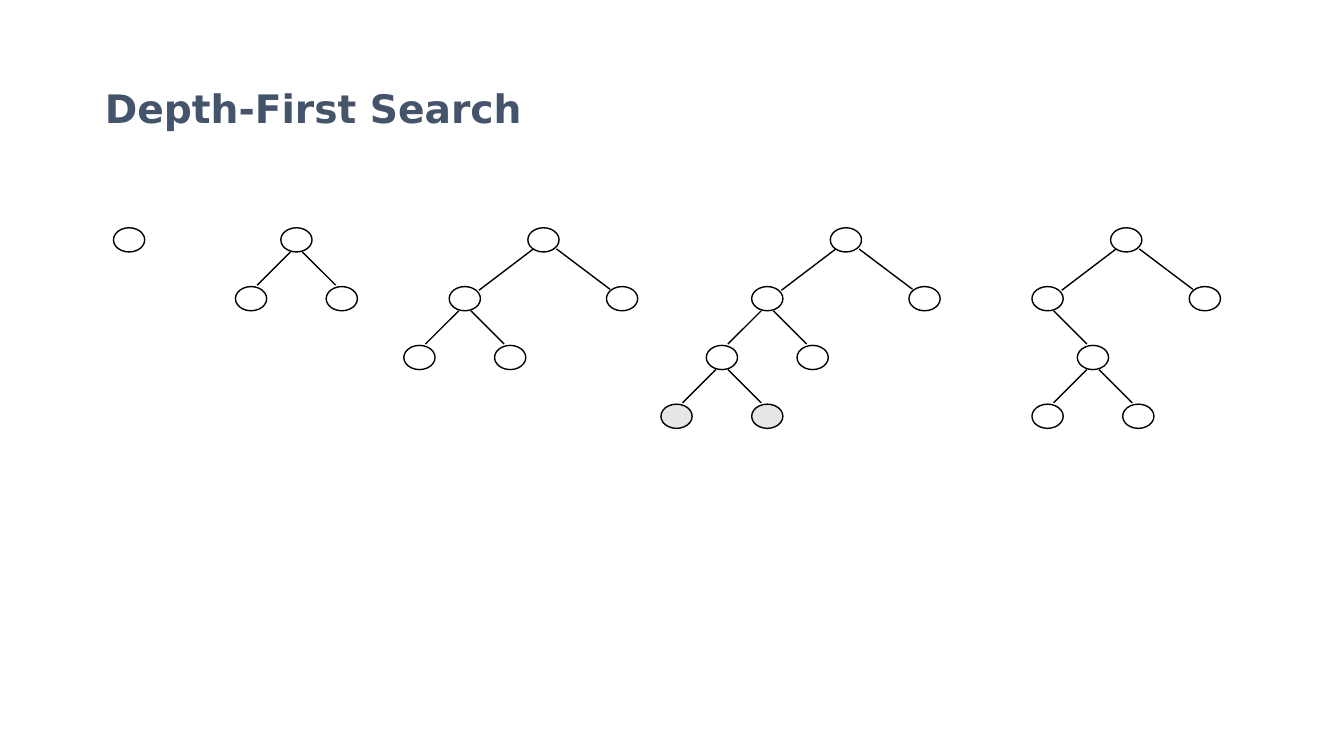
import pptx
import pptx.dml.color
import pptx.enum.shapes
import pptx.enum.text
import pptx.util
from lxml import etree

Inches = pptx.util.Inches
Pt = pptx.util.Pt
DRAW = "http://schemas.openxmlformats.org/drawingml/2006/main"

# Size of a node and drop from one level to the next
WIDE, HIGH, DROP = 0.31, 0.24, 1.75 / 3
TOP = 2.38

# Branch: child offset, then edge start and end, all from the parent's centre
BRANCH = {
    "left": (-0.45, (-0.06, 0.12), (-0.39, 0.45)),
    "right": (0.45, (0.06, 0.12), (0.39, 0.45)),
    "far left": (-0.78, (-0.1, 0.09), (-0.64, 0.5)),
    "far right": (0.78, (0.13, 0.09), (0.66, 0.49)),
}


def color(code):
    return pptx.dml.color.RGBColor.from_string(code)


def write(frame, text, size=28, font="DejaVu Sans", ink="44546A", bold=False):
    para = frame.paragraphs[0]
    para.alignment = pptx.enum.text.PP_ALIGN.LEFT
    run = para.add_run()
    run.text = text
    run.font.size = Pt(size)
    run.font.name = font
    run.font.bold = bold
    run.font.color.rgb = color(ink)


class Deck:
    ink, shade = "000000", "E7E6E6"

    def __init__(self):
        self.prs = pptx.Presentation()
        self.prs.slide_width = Inches(13.33)
        self.prs.slide_height = Inches(7.5)
        self.slide = self.prs.slides.add_slide(self.prs.slide_layouts[5])

    def title(self, text):
        box = self.slide.shapes.title
        box.left, box.top = Inches(0.94), Inches(0.56)
        box.width, box.height = Inches(11.33), Inches(1.02)
        frame = box.text_frame
        frame.auto_size = pptx.enum.text.MSO_AUTO_SIZE.NONE
        frame.vertical_anchor = pptx.enum.text.MSO_ANCHOR.MIDDLE
        write(frame, text, bold=True)

    def stroke(self, line):
        line.color.rgb = color(self.ink)
        line.width = Pt(1)

    def node(self, x, y, fill=None):
        oval = self.slide.shapes.add_shape(
            pptx.enum.shapes.MSO_SHAPE.OVAL,
            Inches(x - WIDE / 2), Inches(y - HIGH / 2), Inches(WIDE), Inches(HIGH))
        oval.shadow.inherit = False
        if fill:
            oval.fill.solid()
            oval.fill.fore_color.rgb = color(fill)
        else:
            oval.fill.background()
        self.stroke(oval.line)

    def edge(self, x, y, start, end):
        line = self.slide.shapes.add_connector(
            pptx.enum.shapes.MSO_CONNECTOR.STRAIGHT,
            Inches(x + start[0]), Inches(y + start[1]),
            Inches(x + end[0]), Inches(y + end[1]))
        self.stroke(line.line)
        etree.SubElement(line.element.spPr, f"{{{DRAW}}}effectLst")

    def tree(self, x, y, kids):
        """Draw a node and its subtrees; a shaded leaf is given as a colour."""
        if isinstance(kids, str):
            self.node(x, y, kids)
            return
        self.node(x, y)
        for side, kid in kids.items():
            shift, start, end = BRANCH[side]
            self.edge(x, y, start, end)
            self.tree(x + shift, y + DROP, kid)


def main():
    deck = Deck()
    deck.title("Depth-First Search")

    # Search steps: centre of each root and the tree below it
    leaf = {}
    pair = {"left": leaf, "right": leaf}
    dark = {"left": deck.shade, "right": deck.shade}
    steps = [
        (1.28, leaf),
        (2.94, pair),
        (5.39, {"far left": pair, "far right": leaf}),
        (8.39, {"far left": {"left": dark, "right": leaf}, "far right": leaf}),
        (11.17, {"far left": {"right": pair}, "far right": leaf}),
    ]
    for x, kids in steps:
        deck.tree(x, TOP, kids)

    deck.prs.save("out.pptx")


if __name__ == "__main__":
    main()
